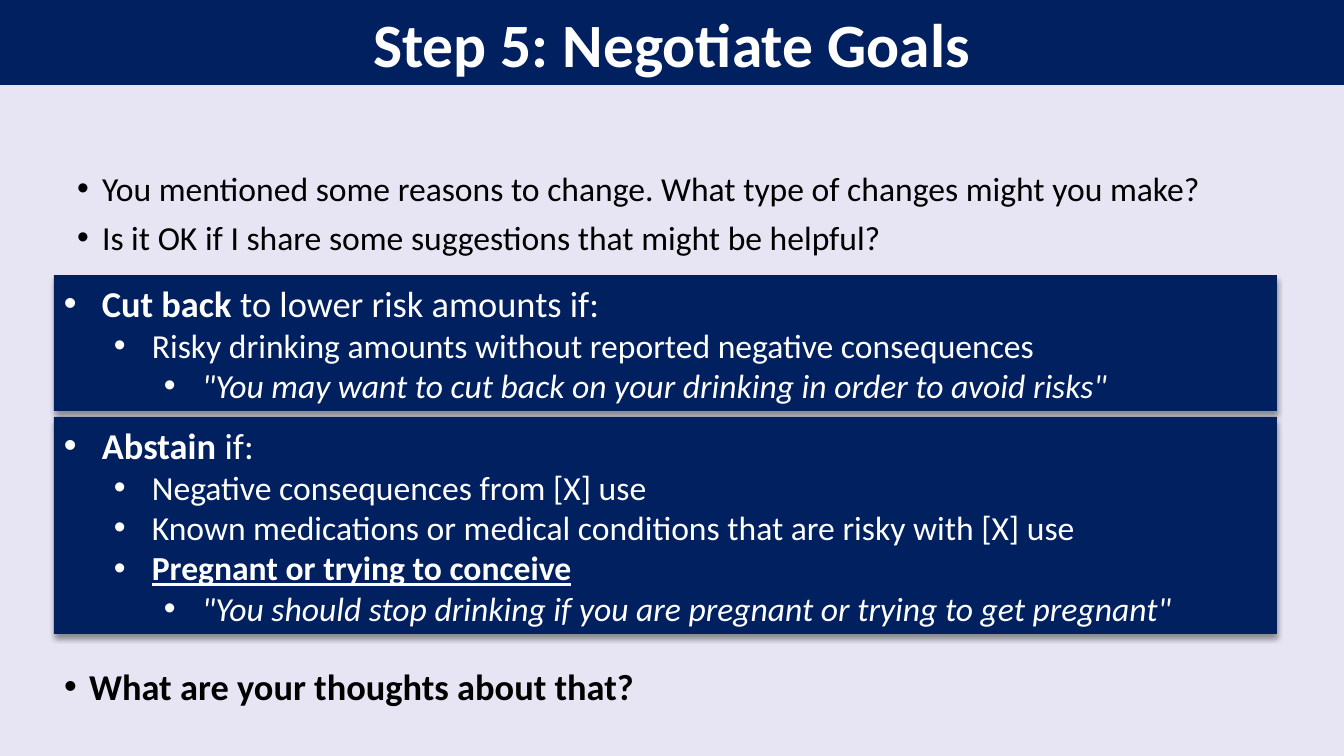
from lxml import etree
from pptx import Presentation
from pptx import util as u
from pptx.dml import color
from pptx.enum import shapes, text
from pptx.oxml import ns

WIDTH, HEIGHT = 1344, 756
EMU_PER_PX = 12192000 / WIDTH
NAVY, WHITE, BLACK, LAVENDER = "002060", "FFFFFF", "000000", "E7E5F3"


def px(length):
    return u.Emu(round(length * EMU_PER_PX))


def paint(fill, value):
    fill.solid()
    fill.fore_color.rgb = color.RGBColor.from_string(value)


def place(shape, box):
    shape.left, shape.top, shape.width, shape.height = map(px, box)


def child(parent, tag, **attributes):
    return etree.SubElement(parent, ns.qn(tag), attributes)


def write(paragraph, words, size=24, ink=BLACK, bold=False, italic=False, underline=False):
    run = paragraph.add_run()
    run.text = words
    font = run.font
    font.name, font.size = "Calibri", u.Pt(size)
    font.bold, font.italic, font.underline = bold, italic, underline
    paint(font.fill, ink)


def add_bullet(paragraph, margin, hanging, ink):
    properties = paragraph._p.get_or_add_pPr()
    properties.set("marL", str(px(margin)))
    properties.set("indent", str(-px(hanging)))
    child(child(properties, "a:buClr"), "a:srgbClr", val=ink)
    child(properties, "a:buFont", typeface="Arial")
    child(properties, "a:buChar", char="•")


def paragraphs_for(frame, items):
    for index, item in enumerate(items):
        yield (frame.add_paragraph() if index else frame.paragraphs[0]), item


def prepare(frame, anchor):
    frame.word_wrap = True
    frame.auto_size = text.MSO_AUTO_SIZE.NONE
    frame.vertical_anchor = anchor


def fill_title(title, box, words):
    place(title, box)
    paint(title.fill, NAVY)
    prepare(title.text_frame, text.MSO_ANCHOR.MIDDLE)
    paragraph = title.text_frame.paragraphs[0]
    paragraph.alignment = text.PP_ALIGN.CENTER
    write(paragraph, words, size=44, ink=WHITE, bold=True)


def fill_questions(body, box, questions, before=6, line_spacing=1.0, **style):
    place(body, box)
    prepare(body.text_frame, text.MSO_ANCHOR.TOP)
    for paragraph, question in paragraphs_for(body.text_frame, questions):
        paragraph.space_before = u.Pt(before)
        paragraph.line_spacing = line_spacing
        add_bullet(paragraph, 25, 25, BLACK)
        write(paragraph, question, **style)


def add_shadow(shape):
    shape.shadow.inherit = False
    effects = shape._element.spPr.find(ns.qn("a:effectLst"))
    shadow = child(effects, "a:outerShdw", blurRad=str(u.Pt(4)), dist=str(u.Pt(3)),
                   dir="5400000", algn="t", rotWithShape="0")
    child(child(shadow, "a:srgbClr", val=BLACK), "a:alpha", val="40000")


def add_advice(slide, box, heading, condition, points):
    panel = slide.shapes.add_shape(shapes.MSO_SHAPE.RECTANGLE, *map(px, box))
    paint(panel.fill, NAVY)
    panel.line.fill.background()
    add_shadow(panel)
    frame = panel.text_frame
    prepare(frame, text.MSO_ANCHOR.MIDDLE)
    rows = [(0, heading, {"size": 26, "bold": True}), *points]
    for paragraph, (level, words, style) in paragraphs_for(frame, rows):
        paragraph.level = level
        paragraph.alignment = text.PP_ALIGN.LEFT
        add_bullet(paragraph, 38 + 50 * level, 38, WHITE)
        write(paragraph, words, ink=WHITE, **style)
    write(frame.paragraphs[0], condition, size=26, ink=WHITE)


def build_goals_slide(presentation):
    slide = presentation.slides.add_slide(presentation.slide_layouts[3])
    paint(slide.background.fill, LAVENDER)
    title, opening, closing = slide.placeholders
    fill_title(title, (0, 0, WIDTH, 85), "Step 5: Negotiate Goals")
    fill_questions(opening, (67, 163, 1199, 117), [
        "You mentioned some reasons to change. What type of changes might you make?",
        "Is it OK if I share some suggestions that might be helpful?",
    ])
    add_advice(slide, (54, 275, 1223, 136), "Cut back ", "to lower risk amounts if:", [
        (1, "Risky drinking amounts without reported negative consequences", {}),
        (2, '"You may want to cut back on your drinking in order to avoid risks"',
         {"italic": True}),
    ])
    add_advice(slide, (54, 417, 1223, 217), "Abstain ", "if:", [
        (1, "Negative consequences from [X] use", {}),
        (1, "Known medications or medical conditions that are risky with [X] use", {}),
        (1, "Pregnant or trying to conceive", {"bold": True, "underline": True}),
        (2, '"You should stop drinking if you are pregnant or trying to get pregnant"',
         {"italic": True}),
    ])
    fill_questions(closing, (54, 650, 1162, 51), ["What are your thoughts about that?"],
                   before=9, line_spacing=1.2, size=26, bold=True)


def main():
    presentation = Presentation()
    presentation.slide_width, presentation.slide_height = px(WIDTH), px(HEIGHT)
    build_goals_slide(presentation)
    presentation.save("out.pptx")


if __name__ == "__main__":
    main()
